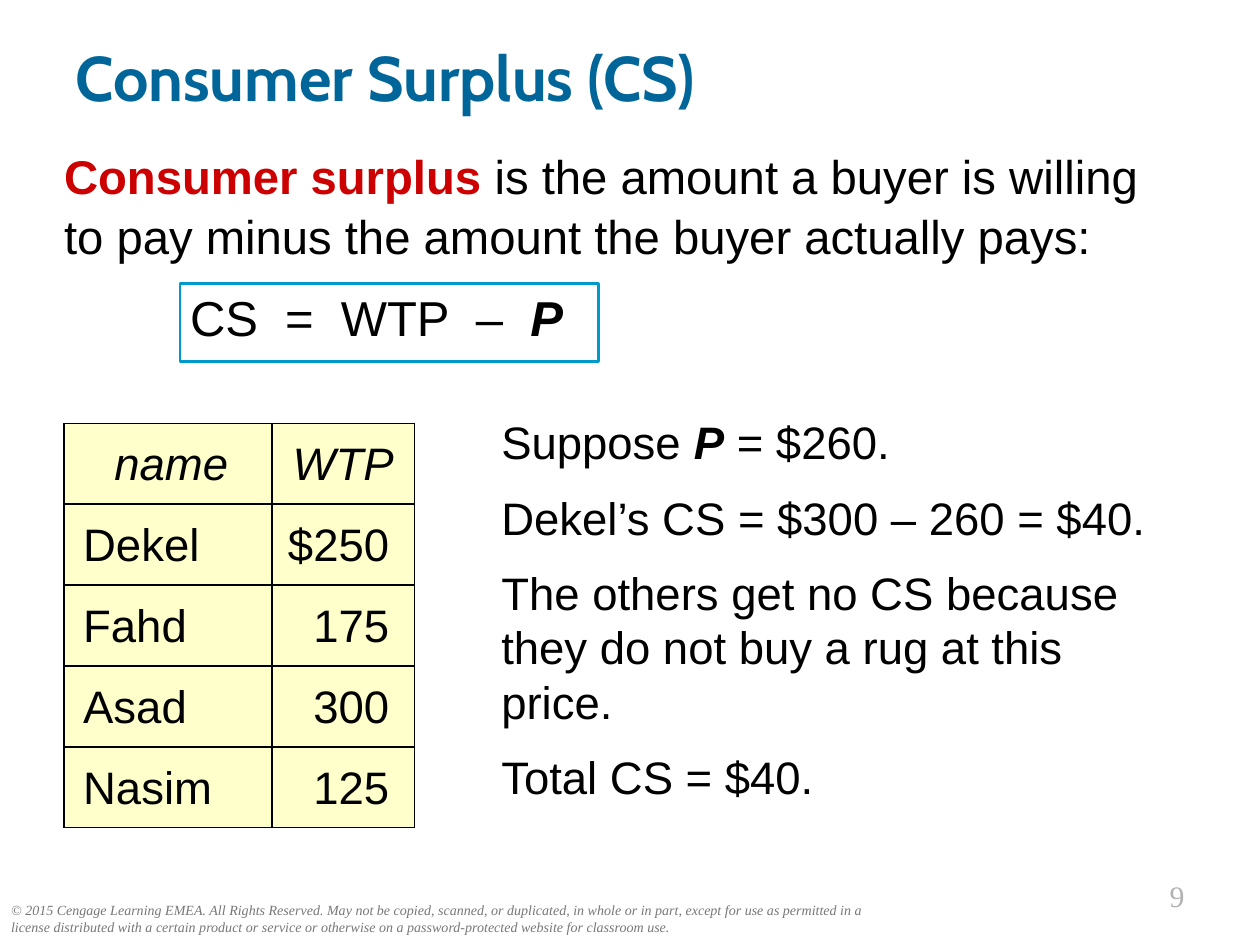
from dataclasses import dataclass
from typing import NamedTuple, Optional

from lxml.etree import SubElement
from pptx import Presentation
from pptx.dml.color import RGBColor
from pptx.enum.shapes import MSO_SHAPE as Shape
from pptx.enum.text import MSO_ANCHOR as Anchor, PP_ALIGN as Align
from pptx.oxml.ns import qn
from pptx.util import Inches, Pt

# Grid of 100 columns by 75 rows over a 10 x 7.5 inch slide
COLUMNS, ROWS = 100, 75
UNIT = Inches(10) // COLUMNS


@dataclass(frozen=True)
class Theme:
    sans: str = "Arial"
    heading: str = "Cabin"
    serif: str = "Times New Roman"
    ink: str = "000000"
    title: str = "006699"
    term: str = "CC0000"
    frame: str = "0099CC"
    cell: str = "FFFFCC"
    notice: str = "777777"
    number: str = "B2B2B2"
    title_size: int = 36
    formula_size: int = 28
    definition_size: int = 27
    text_size: int = 26
    number_size: int = 17
    notice_size: int = 8


THEME = Theme()


class Area(NamedTuple):
    column: float
    row: float
    columns: float
    rows: float

    def emu(self) -> list[int]:
        return [round(length * UNIT) for length in self]


class Style(NamedTuple):
    size: int
    color: str = THEME.ink
    name: str = THEME.sans
    bold: bool = False
    italic: bool = False


class Span(NamedTuple):
    text: str
    style: Style


class Layout(NamedTuple):
    align: Align = Align.LEFT
    line: Optional[float] = None
    gap: float = 0
    tab: Optional[float] = None


def add_tab(paragraph, columns: float) -> None:
    tabs = SubElement(paragraph._p.get_or_add_pPr(), qn("a:tabLst"))
    SubElement(tabs, qn("a:tab"), pos=str(round(columns * UNIT)), algn="l")


def write(frame, paragraphs: list[list[Span]], layout: Layout) -> None:
    """Fill a text frame; the gap stands between paragraphs only."""
    for index, spans in enumerate(paragraphs):
        paragraph = frame.add_paragraph() if index else frame.paragraphs[0]
        formats = {"alignment": layout.align, "line_spacing": layout.line,
                   "space_before": Pt(layout.gap if index else 0)}
        for key, value in formats.items():
            setattr(paragraph, key, value)
        if layout.tab is not None:
            add_tab(paragraph, layout.tab)
        for span in spans:
            run = paragraph.add_run()
            run.text = span.text
            formats = span.style._asdict()
            run.font.color.rgb = RGBColor.from_string(formats.pop("color"))
            formats["size"] = Pt(span.style.size)
            for key, value in formats.items():
                setattr(run.font, key, value)


def add_text(slide, area: Area, paragraphs: list[list[Span]],
             layout: Layout = Layout(), anchor: Anchor = Anchor.TOP) -> None:
    frame = slide.shapes.add_textbox(*area.emu()).text_frame
    frame.word_wrap = True
    frame.vertical_anchor = anchor
    write(frame, paragraphs, layout)


def add_borders(cell) -> None:
    properties = cell._tc.get_or_add_tcPr()
    for position, side in enumerate(("lnL", "lnR", "lnT", "lnB")):
        line = properties.makeelement(qn(f"a:{side}"), {"w": str(Pt(1))})
        properties.insert(position, line)
        fill = SubElement(line, qn("a:solidFill"))
        SubElement(fill, qn("a:srgbClr"), val=THEME.ink)


def add_buyers(slide, area: Area, widths: tuple[float, ...],
               buyers: list[tuple[str, str]]) -> None:
    table = slide.shapes.add_table(len(buyers), len(widths), *area.emu()).table
    for column, width in zip(table.columns, widths):
        column.width = round(width * UNIT)
    aligns = (Align.LEFT, Align.RIGHT)
    for r, buyer in enumerate(buyers):
        header = r == 0
        for c, text in enumerate(buyer):
            cell = table.cell(r, c)
            formats = {
                "vertical_anchor": Anchor.MIDDLE,
                "margin_left": Inches(0.1 if c else 0.15),
                "margin_right": Inches(0.2 if c and not header else 0.1),
            }
            for key, value in formats.items():
                setattr(cell, key, value)
            cell.fill.solid()
            cell.fill.fore_color.rgb = RGBColor.from_string(THEME.cell)
            add_borders(cell)
            style = Style(THEME.text_size, italic=header)
            align = Align.CENTER if header else aligns[c]
            write(cell.text_frame, [[Span(text, style)]], Layout(align, 1.05))


def add_frame(slide, area: Area) -> None:
    frame = slide.shapes.add_shape(Shape.RECTANGLE, *area.emu())
    frame.shadow.inherit = False
    frame.fill.background()
    frame.line.color.rgb = RGBColor.from_string(THEME.frame)
    frame.line.width = Pt(1.5)


def main() -> None:
    deck = Presentation()
    deck.slide_width, deck.slide_height = COLUMNS * UNIT, ROWS * UNIT
    slide = deck.slides.add_slide(deck.slide_layouts[6])

    notice = Style(THEME.notice_size, THEME.notice, THEME.serif, italic=True)
    add_text(slide, Area(-0.1, 71.1, 72.6, 3.7), [[Span(
        "© 2015 Cengage Learning EMEA. All Rights Reserved. May not be copied, "
        "scanned, or duplicated, in whole or in part, except for use as "
        "permitted in a license distributed with a certain product or service "
        "or otherwise on a password-protected website for classroom use.",
        notice)]])
    number = Style(THEME.number_size, THEME.number, THEME.serif)
    add_text(slide, Area(82.5, 69.2, 12.5, 3.9), [[Span("9", number)]],
             Layout(Align.RIGHT))

    title = Style(THEME.title_size, THEME.title, THEME.heading, bold=True)
    add_text(slide, Area(5, 2.5, 90, 7.1),
             [[Span("Consumer Surplus (CS)", title)]], anchor=Anchor.MIDDLE)

    definition = Style(THEME.definition_size)
    term = definition._replace(color=THEME.term, bold=True)
    formula = Style(THEME.formula_size)
    add_text(slide, Area(4.1, 11, 89.1, 18), [
        [Span("Consumer surplus", term),
         Span(" is the amount a buyer is willing to pay minus the amount "
              "the buyer actually pays:", definition)],
        [Span("\tCS  =  WTP  –  ", formula),
         Span("P", formula._replace(bold=True, italic=True))],
    ], Layout(line=1.05, gap=12, tab=10))

    add_buyers(slide, Area(5.1, 33.6, 27.8, 32.1), (16.5, 11.3), [
        ("name", "WTP"),
        ("Dekel", "$250"),
        ("Fahd", "175"),
        ("Asad", "300"),
        ("Nasim", "125"),
    ])

    text = Style(THEME.text_size)
    add_text(slide, Area(38.8, 32.4, 56.2, 36.5), [
        [Span("Suppose ", text),
         Span("P", text._replace(bold=True, italic=True)),
         Span(" = $260.", text)],
        [Span("Dekel’s CS = $300 – 260 = $40.", text)],
        [Span("The others get no CS because they do not buy a rug at this "
              "price.", text)],
        [Span("Total CS = $40.", text)],
    ], Layout(gap=0.45 * THEME.text_size))

    add_frame(slide, Area(14.3, 22.5, 33.2, 6.2))
    deck.save("out.pptx")


if __name__ == "__main__":
    main()
